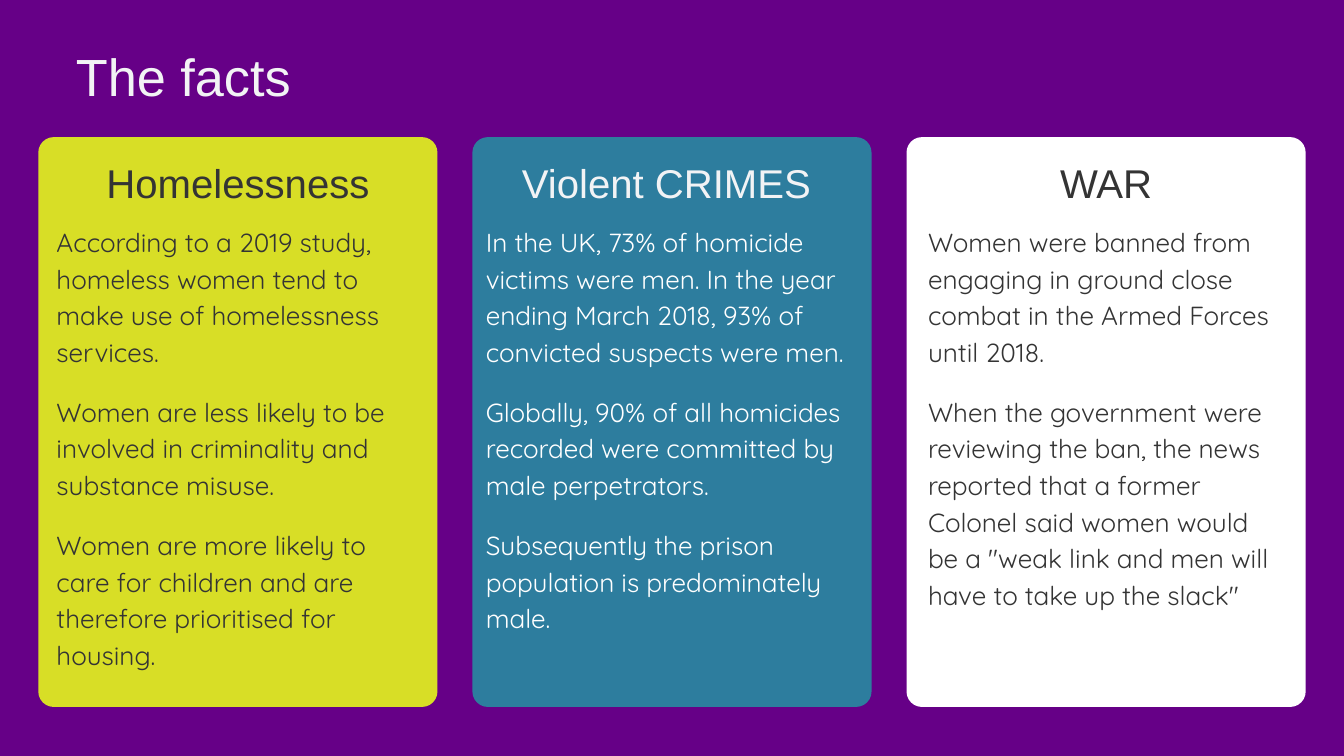
from dataclasses import dataclass

from pptx import Presentation
from pptx.dml.color import RGBColor
from pptx.enum.shapes import MSO_SHAPE
from pptx.enum.text import PP_ALIGN
from pptx.slide import Slide
from pptx.util import Inches, Pt

PURPLE = RGBColor(0x66, 0x00, 0x87)
LIME = RGBColor(0xD8, 0xDE, 0x26)
TEAL = RGBColor(0x2D, 0x7D, 0x9E)
WHITE = RGBColor(0xFF, 0xFF, 0xFF)
PALE = RGBColor(0xF2, 0xF3, 0xF5)
DARK = RGBColor(0x34, 0x34, 0x34)

# Card grid, in inches
LEFT, TOP, STEP = 0.57, 2.04, 6.46
WIDTH, HEIGHT, RADIUS = 5.94, 8.48, 0.23
HEAD_W = 5.54


@dataclass
class Style:
    font: str
    size: float
    color: RGBColor
    line: float
    gap: float = 0
    align: PP_ALIGN = PP_ALIGN.LEFT


@dataclass
class Card:
    fill: RGBColor
    head: str
    head_ink: RGBColor
    ink: RGBColor
    left: float
    width: float
    facts: list[str]


CARDS = [
    Card(LIME, "Homelessness", DARK, DARK, 0.84, 5.42, [
        "According to a 2019 study, homeless women tend to make use of "
        "homelessness services.",
        "Women are less likely to be involved in criminality and "
        "substance misuse.",
        "Women are more likely to care for children and are therefore "
        "prioritised for housing.",
    ]),
    Card(TEAL, "Violent CRIMES ", PALE, WHITE, 7.23, 5.54, [
        "In the UK, 73% of homicide victims were men. In the year ending "
        "March 2018, 93% of convicted suspects were men.",
        "Globally, 90% of all homicides recorded were committed by male "
        "perpetrators.",
        "Subsequently the prison population is predominately male.",
    ]),
    Card(WHITE, "WAR", DARK, DARK, 13.81, 5.29, [
        "Women were banned from engaging in ground close combat in the "
        "Armed Forces until 2018.",
        "When the government were reviewing the ban, the news reported that "
        "a former Colonel said women would be a \"weak link and men will "
        "have to take up the slack\"",
    ]),
]


def add_text(slide: Slide, left: float, top: float, width: float,
             height: float, texts: list[str], style: Style) -> None:
    box = slide.shapes.add_textbox(
        Inches(left), Inches(top), Inches(width), Inches(height))
    frame = box.text_frame
    frame.word_wrap = True
    frame.margin_left = frame.margin_right = 0
    frame.margin_top = frame.margin_bottom = 0
    for i, text in enumerate(texts):
        para = frame.add_paragraph() if i else frame.paragraphs[0]
        para.alignment = style.align
        para.line_spacing = Pt(style.line)
        if i:
            para.space_before = Pt(style.gap)
        run = para.add_run()
        run.text = text
        run.font.name = style.font
        run.font.size = Pt(style.size)
        run.font.color.rgb = style.color


def add_card(slide: Slide, left: float, card: Card) -> None:
    # Panel
    panel = slide.shapes.add_shape(
        MSO_SHAPE.ROUNDED_RECTANGLE,
        Inches(left), Inches(TOP), Inches(WIDTH), Inches(HEIGHT))
    panel.adjustments[0] = RADIUS / WIDTH
    panel.shadow.inherit = False
    panel.fill.solid()
    panel.fill.fore_color.rgb = card.fill
    panel.line.fill.background()

    # Heading and facts
    add_text(slide, left + (WIDTH - HEAD_W) / 2, 2.29, HEAD_W, 0.76,
             [card.head],
             Style("Arial", 43, card.head_ink, 55.9, align=PP_ALIGN.CENTER))
    add_text(slide, card.left, 3.29, card.width, 6.64, card.facts,
             Style("Quicksand", 28, card.ink, 39.2, 25.2))


def main() -> None:
    deck = Presentation()
    deck.slide_width, deck.slide_height = Inches(20), Inches(11.25)
    slide = deck.slides.add_slide(deck.slide_layouts[6])
    slide.background.fill.solid()
    slide.background.fill.fore_color.rgb = PURPLE

    # Title
    add_text(slide, 1.13, 0.58, 17.75, 1.02, ["The facts"],
             Style("Arial", 56, PALE, 72.8))

    # Cards
    for i, card in enumerate(CARDS):
        add_card(slide, LEFT + i * STEP, card)

    deck.save("out.pptx")


if __name__ == "__main__":
    main()
